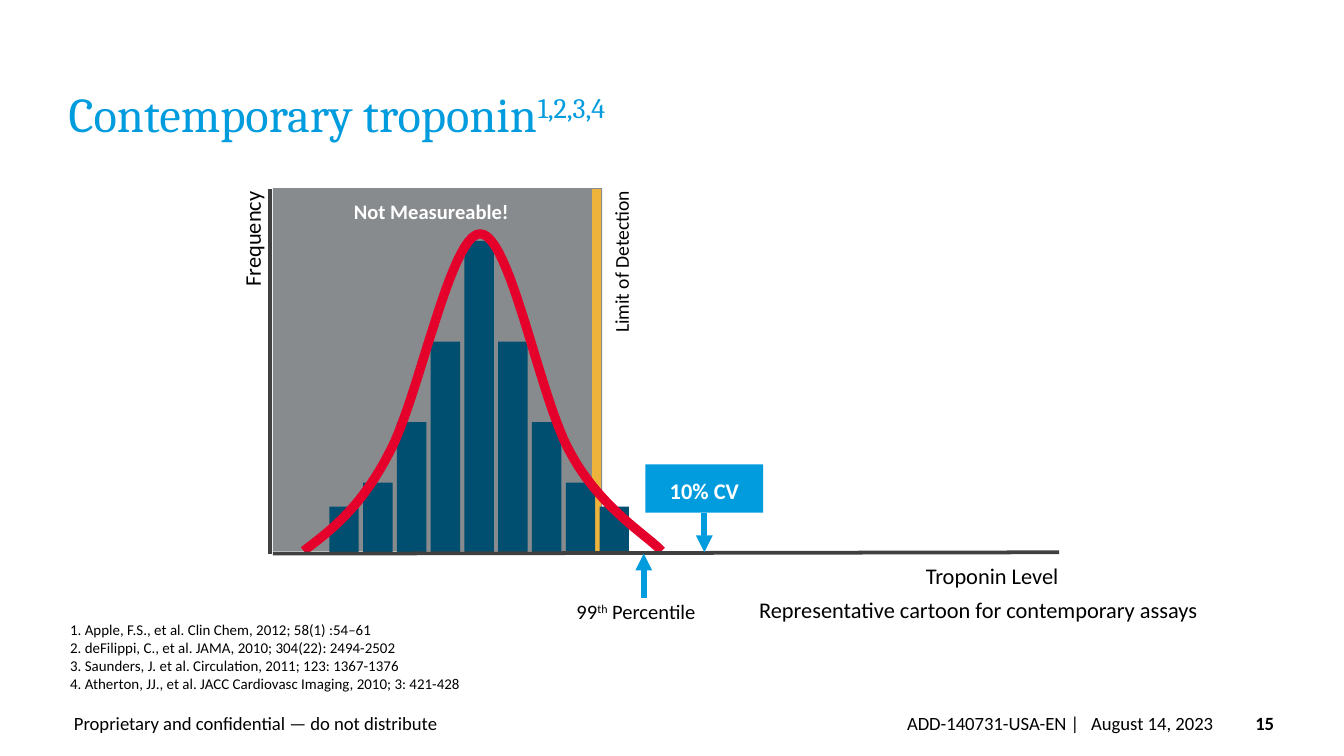
import pptx
import pptx.dml.color
import pptx.enum.shapes
import pptx.enum.text
import pptx.oxml
import pptx.oxml.ns
import pptx.util

Pt = pptx.util.Pt
ALIGN = pptx.enum.text.PP_ALIGN
ANCHOR = pptx.enum.text.MSO_ANCHOR

BLUE, NAVY, RED, GOLD = "009CDE", "004F71", "E4002B", "EEB33B"
GRAY, AXIS, BLACK, WHITE = "888B8D", "404040", "000000", "FFFFFF"


def rgb(value):
    return pptx.dml.color.RGBColor.from_string(value)


def bezier(p0, p1, p2, p3, steps=24):
    """Points along a cubic curve, without its start."""
    for n in range(1, steps + 1):
        t = n / steps
        u = 1 - t
        yield tuple(u**3 * a + 3 * u * u * t * b + 3 * u * t * t * c + t**3 * d
                    for a, b, c, d in zip(p0, p1, p2, p3))


class SlideBuilder:
    """Holds the text style and the current slide; lengths are points."""

    font = "Calibri"
    inset = (7.2, 3.6, 7.2, 3.6)

    def __init__(self, slide):
        self.slide = slide
        self.shapes = slide.shapes

    def fill_text(self, tf, paragraphs, color=BLACK, align=ALIGN.LEFT,
                  anchor=ANCHOR.TOP, inset=inset, wrap=True, line_spacing=None, **font):
        """Each paragraph is a string or a list of (text, is_superscript)."""
        margins = zip(("margin_left", "margin_top", "margin_right", "margin_bottom"),
                      map(Pt, inset))
        frame = dict(margins, auto_size=pptx.enum.text.MSO_AUTO_SIZE.NONE,
                     word_wrap=wrap, vertical_anchor=anchor)
        for name, value in frame.items():
            setattr(tf, name, value)
        for i, runs in enumerate(paragraphs):
            p = tf.add_paragraph() if i else tf.paragraphs[0]
            p.alignment = align
            p.line_spacing = line_spacing
            for text, raised in [(runs, False)] if isinstance(runs, str) else runs:
                r = p.add_run()
                r.text = text
                for name, value in {"name": self.font, **font}.items():
                    setattr(r.font, name, value)
                r.font.color.rgb = rgb(color)
                if raised:
                    r.font._element.set("baseline", "30000")

    def title(self, box, runs, **style):
        sp = self.shapes.title
        sp.left, sp.top, sp.width, sp.height = map(Pt, box)
        self.fill_text(sp.text_frame, [runs], **style)

    def text(self, box, *paragraphs, rotation=0, **style):
        sp = self.shapes.add_textbox(*map(Pt, box))
        sp.rotation = rotation
        self.fill_text(sp.text_frame, paragraphs, **style)

    def rect(self, box, color):
        sp = self.shapes.add_shape(pptx.enum.shapes.MSO_SHAPE.RECTANGLE, *map(Pt, box))
        sp.shadow.inherit = False
        sp.fill.solid()
        sp.fill.fore_color.rgb = rgb(color)
        sp.line.fill.background()
        return sp

    def line(self, start, end, color, width, arrow=False):
        cxn = self.shapes.add_connector(pptx.enum.shapes.MSO_CONNECTOR.STRAIGHT,
                                        *map(Pt, start + end))
        cxn.line.color.rgb = rgb(color)
        cxn.line.width = Pt(width)
        if arrow:
            tail = pptx.oxml.parse_xml(
                f'<a:tailEnd {pptx.oxml.ns.nsdecls("a")} type="triangle"/>')
            cxn.line._get_or_add_ln().append(tail)
        cxn._element.spPr.append(pptx.oxml.parse_xml(
            f'<a:effectLst {pptx.oxml.ns.nsdecls("a")}/>'))
        return cxn

    def curve(self, start, segments, color, width):
        points = []
        for segment in segments:
            points += bezier(start, *segment)
            start = segment[-1]
        first, *rest = [(Pt(x), Pt(y)) for x, y in [CURVE_START] + points]
        builder = self.shapes.build_freeform(*first)
        builder.add_line_segments(rest, close=False)
        sp = builder.convert_to_shape()
        sp.shadow.inherit = False
        sp.fill.background()
        sp.line.color.rgb = rgb(color)
        sp.line.width = Pt(width)


CURVE_START = (162.7, 295.2)
CURVE = [
    [(177.8, 283.7), (193, 272.2), (208.1, 243.4)],
    [(223.9, 215.3), (241.2, 125.3), (257.2, 125.3)],
    [(273.6, 125.3), (289.4, 215.3), (306, 243.4)],
    [(321.8, 272.2), (346.3, 286.6), (354.4, 295.2)],
]
BAR_LEFT, BAR_PITCH, BAR_WIDTH, BAR_BASE = 176.4, 18.1, 15.8, 296
HALF_HEIGHTS = [24.5, 37.4, 69.8, 113]
BAR_HEIGHTS = HALF_HEIGHTS + [167] + HALF_HEIGHTS[::-1]


def main():
    prs = pptx.Presentation()
    prs.slide_width, prs.slide_height = Pt(720), Pt(405)
    s = SlideBuilder(prs.slides.add_slide(prs.slide_layouts[5]))

    s.title((36.7, 51.1, 640.8, 28.1),
            [("Contemporary troponin", False), ("1,2,3,4", True)],
            name="Cambria", size=Pt(26), color=BLUE, line_spacing=0.8,
            inset=(0, 0, 7.2, 3.6))

    # Footer and references
    footer = dict(size=Pt(10), anchor=ANCHOR.BOTTOM, inset=(0, 3.6, 0, 3.6))
    s.text((39.6, 368, 218, 28.8), "Proprietary and confidential — do not distribute",
           **footer)
    s.text((447.8, 375.1, 130.3, 21.6), "ADD-140731-USA-EN |", align=ALIGN.RIGHT, **footer)
    s.text((584.6, 375.1, 93.6, 21.6), "August 14, 2023", **footer)
    s.text((666, 375.1, 23, 21.6), "15", align=ALIGN.CENTER, bold=True, **footer)
    s.text((30.5, 329, 391, 59.8),
           "1. Apple, F.S., et al. Clin Chem, 2012; 58(1) :54–61",
           "2. deFilippi, C., et al. JAMA, 2010; 304(22): 2494-2502",
           "3. Saunders, J. et al. Circulation, 2011; 123: 1367-1376",
           "4. Atherton, JJ., et al. JACC Cardiovasc Imaging, 2010; 3: 421-428",
           size=Pt(8))

    # Unmeasurable zone, frequency axis and detection limit
    s.rect((146.2, 100.8, 176.4, 194.4), GRAY)
    s.line((144.7, 101.5), (144.7, 296.6), AXIS, 2)
    s.line((319.7, 296.6), (319.7, 101.5), GOLD, 5)
    s.text((143.3, 103, 175.7, 20.9), "Not Measureable!", size=Pt(11), bold=True,
           color=WHITE, align=ALIGN.CENTER)

    # Distribution
    for i, height in enumerate(BAR_HEIGHTS):
        s.rect((BAR_LEFT + i * BAR_PITCH, BAR_BASE - height, BAR_WIDTH, height), NAVY)
    s.curve(CURVE_START, CURVE, RED, 5)
    s.line((146.2, 296.6), (567.4, 295.9), AXIS, 2)

    # Markers
    badge = s.rect((345.8, 248.8, 63, 25.9), BLUE)
    s.fill_text(badge.text_frame, ["10% CV"], size=Pt(12), bold=True, color=WHITE,
                align=ALIGN.CENTER, anchor=ANCHOR.MIDDLE, inset=(0, 2, 0, 0))
    cv_arrow = s.line((377.3, 274.7), (377.3, 295.9), BLUE, 3, arrow=True)
    cv_arrow.begin_connect(badge, 2)
    s.line((344.9, 320.4), (344.9, 296.6), BLUE, 3, arrow=True)

    # Labels
    s.text((95, 124.6, 79.9, 21.6), "Frequency", rotation=270, size=Pt(12),
           align=ALIGN.RIGHT, anchor=ANCHOR.BOTTOM)
    s.text((286.6, 130.3, 91.4, 18.7), "Limit of Detection", rotation=270,
           size=Pt(10.5), wrap=False)
    s.text((301.7, 317.5, 80.6, 20.9),
           [("99", False), ("th", True), (" Percentile", False)], size=Pt(11), wrap=False)
    s.text((488.9, 297.4, 86.4, 21.6), "Troponin Level", size=Pt(12), wrap=False)
    s.text((399.6, 316.1, 252, 21.6), "Representative cartoon for contemporary assays",
           size=Pt(12), wrap=False)

    prs.save("out.pptx")


if __name__ == "__main__":
    main()
